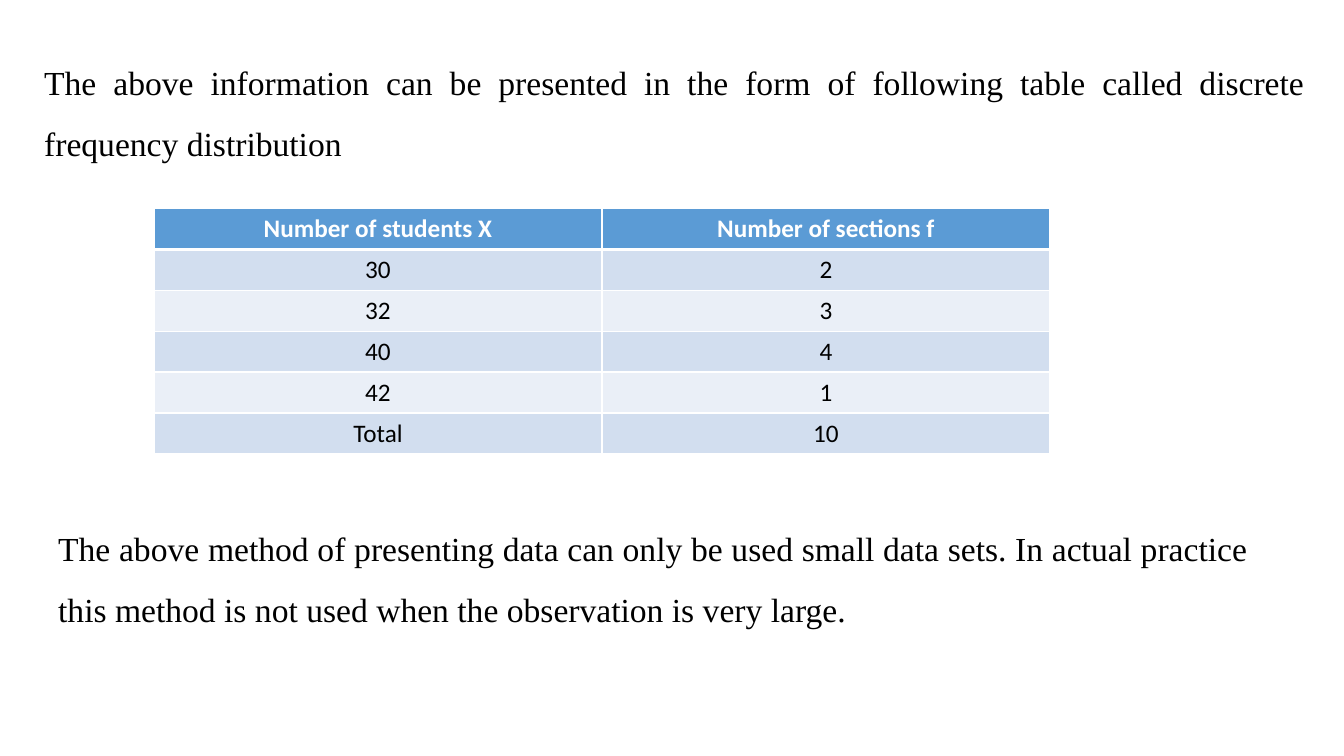
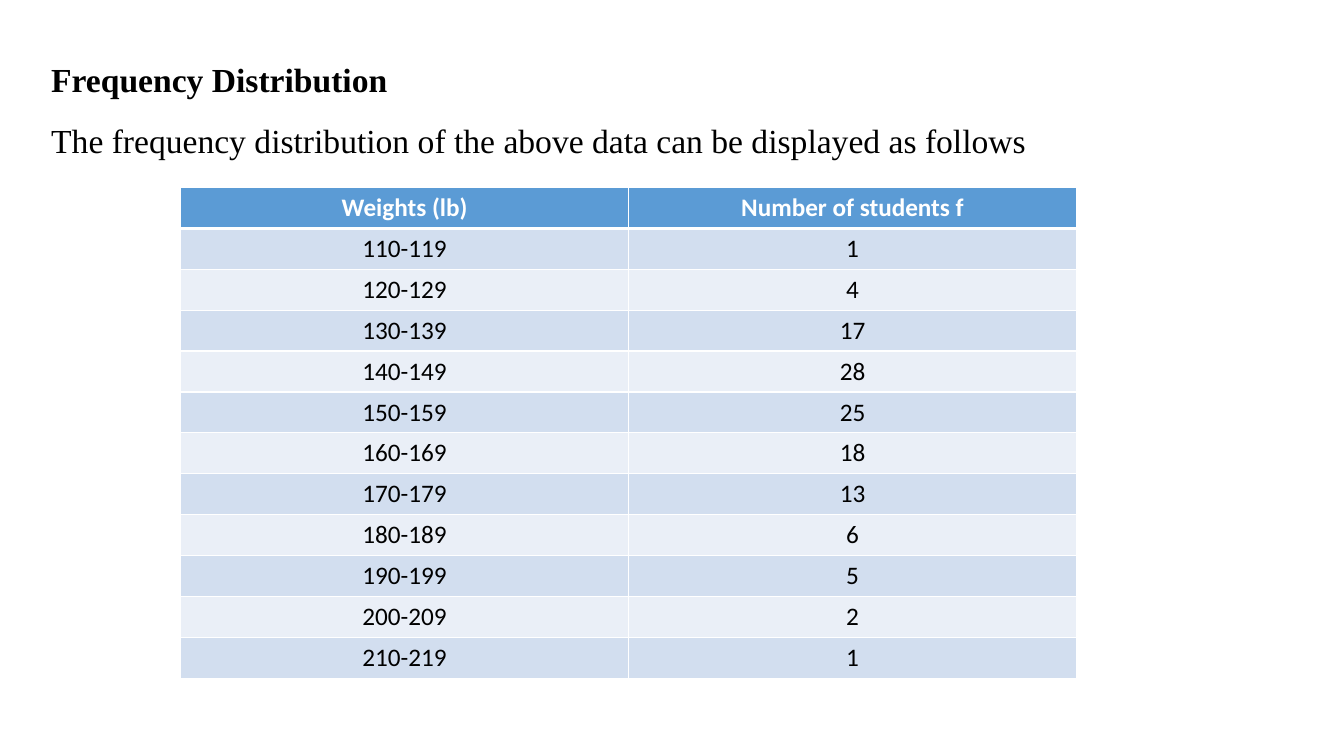
from lxml.etree import SubElement
from pptx import Presentation
from pptx.dml.color import RGBColor
from pptx.enum.text import MSO_AUTO_SIZE as AutoSize, MSO_ANCHOR as Anchor, PP_ALIGN as Align
from pptx.oxml.ns import qn
from pptx.util import Pt

COLORS = {"ink": "000000", "paper": "FFFFFF", "header": "5B9BD5",
          "odd": "D2DEEF", "even": "EAEFF7"}
COLUMNS, ROWS, UNIT = 96, 54, Pt(10)
TABLE_WIDTH, ROW_HEIGHT = 64, 2.92


def grid(*lengths):
    """Turn grid lengths into slide lengths."""
    return [round(length * UNIT) for length in lengths]


def write(para, text, font="Times New Roman", size=24, color="ink",
          bold=False, align=Align.LEFT, spacing=1.0):
    """Write formatted text into a paragraph."""
    para.alignment = align
    para.line_spacing = spacing
    span = para.add_run()
    span.text = text
    span.font.name = font
    span.font.size = Pt(size)
    span.font.bold = bold
    span.font.color.rgb = RGBColor.from_string(COLORS[color])


def add_borders(cell, **widths):
    """Draw the cell edges in the paper colour."""
    properties = cell._tc.get_or_add_tcPr()
    for side, width in widths.items():
        line = SubElement(properties, qn(f"a:ln{side}"), w=str(Pt(width)))
        fill = SubElement(line, qn("a:solidFill"))
        SubElement(fill, qn("a:srgbClr"), val=COLORS["paper"])


class Deck:
    """Hold the presentation, its style and the current page."""

    def __init__(self):
        """Start a widescreen presentation."""
        self.file = Presentation()
        self.file.slide_width, self.file.slide_height = grid(COLUMNS, ROWS)
        self.page = None

    def add_page(self):
        """Start a blank page."""
        self.page = self.file.slides.add_slide(self.file.slide_layouts[6])

    def add_text(self, left, top, width, height, *lines, align=Align.LEFT):
        """Add a text box from pairs of text and boldness."""
        box = self.page.shapes.add_textbox(*grid(left, top, width, height))
        frame = box.text_frame
        frame.word_wrap = True
        frame.auto_size = AutoSize.SHAPE_TO_FIT_TEXT
        for index, (text, bold) in enumerate(lines):
            para = frame.add_paragraph() if index else frame.paragraphs[0]
            write(para, text, bold=bold, align=align, spacing=1.5)

    def add_table(self, left, top, records):
        """Add a banded table whose first record is the header."""
        place = grid(left, top, TABLE_WIDTH, ROW_HEIGHT * len(records))
        table = self.page.shapes.add_table(len(records), len(records[0]), *place).table
        for row, record in enumerate(records):
            is_header = row == 0
            band = "header" if is_header else "odd" if row % 2 else "even"
            for column, text in enumerate(record):
                cell = table.cell(row, column)
                add_borders(cell, L=1, R=1, T=3 if row == 1 else 1, B=3 if is_header else 1)
                cell.fill.solid()
                cell.fill.fore_color.rgb = RGBColor.from_string(COLORS[band])
                cell.vertical_anchor = Anchor.TOP
                write(cell.text_frame.paragraphs[0], text, font="Calibri", size=18,
                      color="paper" if is_header else "ink", bold=is_header,
                      align=Align.CENTER)


def main():
    """Build and save the deck."""
    deck = Deck()

    deck.add_page()
    deck.add_table(11, 14.9, [
        ("Number of students X", "Number of sections f"),
        ("30", "2"), ("32", "3"), ("40", "4"), ("42", "1"), ("Total", "10")])
    deck.add_text(2.45, 2.65, 91.45, 13.8, (
        "The above information can be presented in the form of following table "
        "called discrete frequency distribution", False), align=Align.JUSTIFY)
    deck.add_text(3.45, 35.95, 86.4, 13.3, (
        "The above method of presenting data can only be used small data sets. "
        "In actual practice this method is not used when the observation is very large.",
        False), align=Align.JUSTIFY)

    deck.add_page()
    deck.add_text(
        2.95, 2.45, 90.8, 13.8, ("Frequency Distribution", True),
        ("The frequency distribution of the above data can be displayed as follows", False))
    counts = (1, 4, 17, 28, 25, 18, 13, 6, 5, 2, 1)
    weights = [(f"{low}-{low + 9}", str(count))
               for low, count in zip(range(110, 220, 10), counts)]
    deck.add_table(12.9, 13.4, [("Weights (lb)", "Number of students f"), *weights])

    deck.file.save("out.pptx")


if __name__ == "__main__":
    main()
